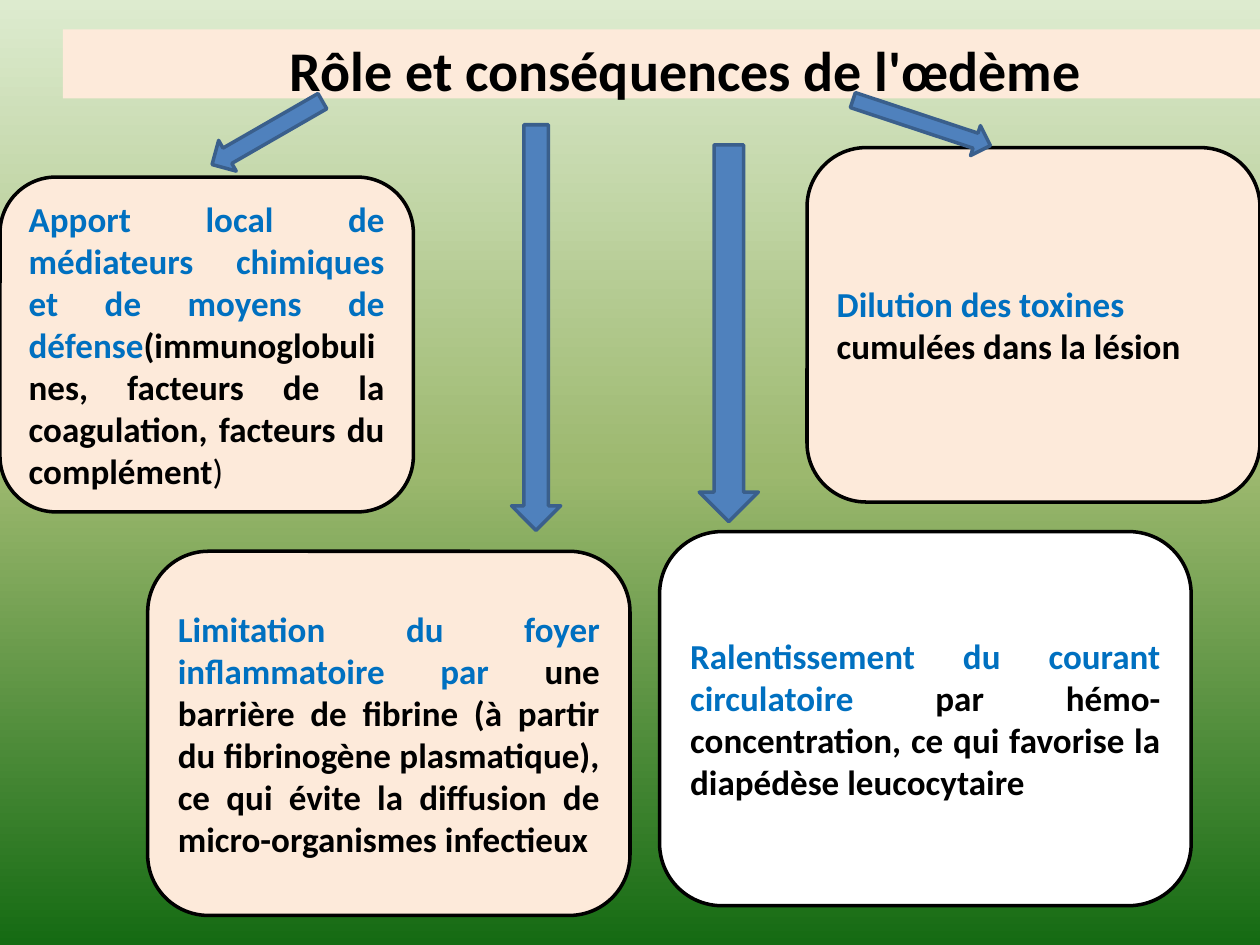
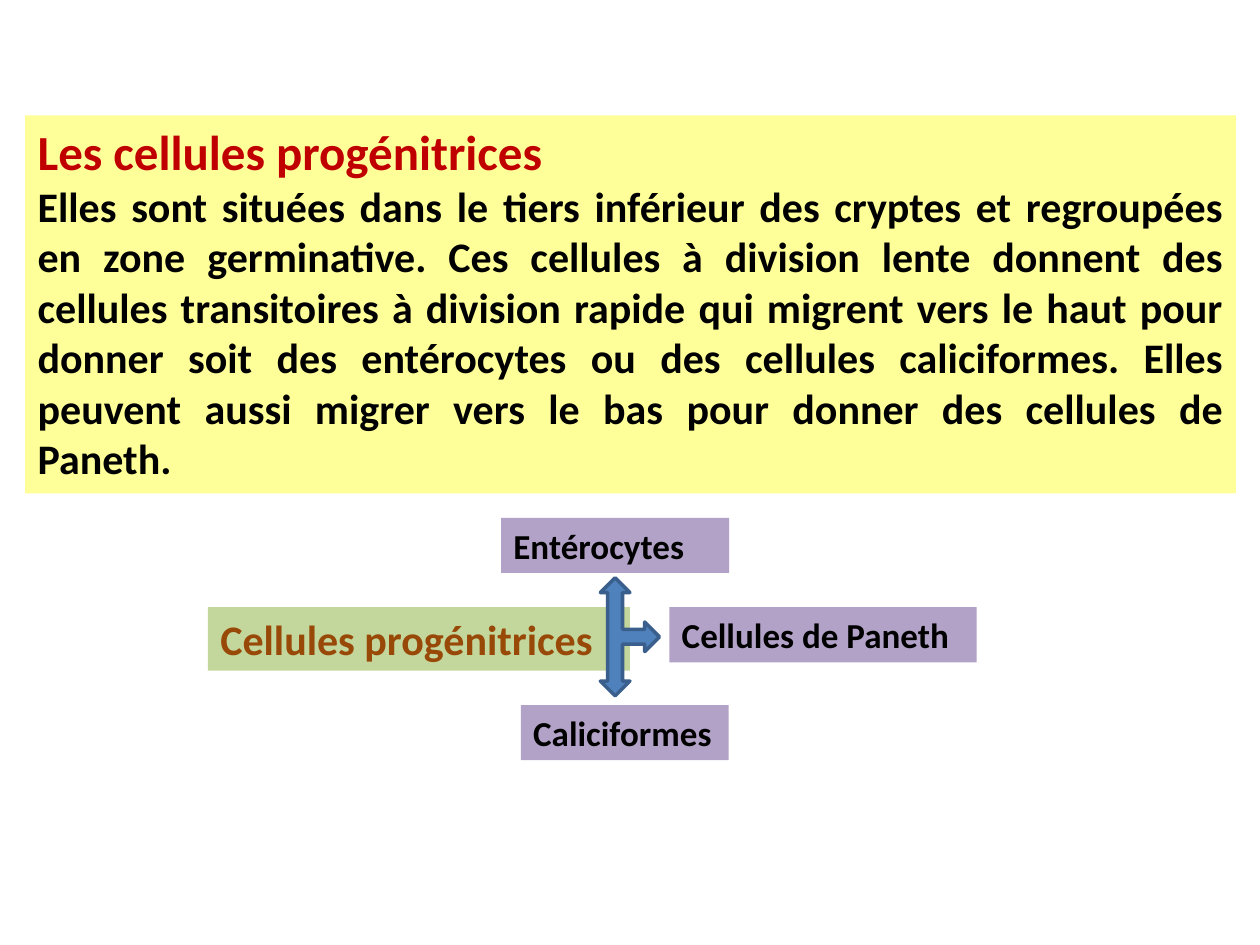
from copy import deepcopy

from pptx import Presentation
from pptx.dml.color import RGBColor
from pptx.enum import shapes, text
from pptx.oxml.ns import qn
from pptx.util import Pt

FONT = "Calibri"
BLACK = RGBColor(0x00, 0x00, 0x00)
WHITE = RGBColor(0xFF, 0xFF, 0xFF)
BLUE = RGBColor(0x00, 0x70, 0xC0)
RED = RGBColor(0xC0, 0x00, 0x00)
BROWN = RGBColor(0x98, 0x48, 0x07)
PEACH = RGBColor(0xFD, 0xEA, 0xDA)
YELLOW = RGBColor(0xFF, 0xFF, 0x99)
GREEN = RGBColor(0xC3, 0xD6, 0x9B)
PURPLE = RGBColor(0xB3, 0xA2, 0xC7)
ARROW_FILL = RGBColor(0x4F, 0x81, 0xBD)
ARROW_LINE = RGBColor(0x3A, 0x5F, 0x8C)
GRADIENT = [(0, RGBColor(0xDD, 0xEB, 0xCF)), (0.5, RGBColor(0x9C, 0xB8, 0x6E)),
            (1, RGBColor(0x15, 0x6B, 0x13))]

KIND = shapes.MSO_SHAPE
ALIGN = text.PP_ALIGN
ANCHOR = text.MSO_ANCHOR


def add_shape(parent, kind, at, fill, line=None, rotation=0):
    sp = parent.add_shape(kind, *[Pt(v) for v in at])
    sp.shadow.inherit = False
    sp.rotation = rotation
    sp.fill.solid()
    sp.fill.fore_color.rgb = fill
    if line is None:
        sp.line.fill.background()
    else:
        sp.line.color.rgb = line
        sp.line.width = Pt(2)
    return sp


def write(sp, paragraphs, align, anchor=ANCHOR.TOP):
    """Each paragraph is a list of (text, size, colour) runs."""
    tf = sp.text_frame
    tf.word_wrap = True
    tf.vertical_anchor = anchor
    for i, runs in enumerate(paragraphs):
        p = tf.paragraphs[0] if i == 0 else tf.add_paragraph()
        p.alignment = align
        for words, size, color in runs:
            r = p.add_run()
            r.text = words
            r.font.name = FONT
            r.font.size = Pt(size)
            r.font.bold = True
            r.font.color.rgb = color


prs = Presentation()
prs.slide_width, prs.slide_height = Pt(720), Pt(540)
blank = prs.slide_layouts[6]

# Slide 1: gradient background
s = prs.slides.add_slide(blank)
bg = s.background.fill
bg.gradient()
bg.gradient_angle = 270
stops = s._element.find(".//" + qn("a:gsLst"))
stops.append(deepcopy(stops[-1]))
for stop, (position, color) in zip(bg.gradient_stops, GRADIENT):
    stop.position = position
    stop.color.rgb = color

# Title band
sp = add_shape(s.shapes, KIND.RECTANGLE, (36, 16.8, 684, 39.4), PEACH)
write(sp, [[("Rôle et conséquences de l'œdème", 32, BLACK)]], ALIGN.CENTER)
sp.text_frame.margin_left = Pt(35)

# Roles of the oedema
roles = [
    ((0, 101.2, 236.2, 191.3), PEACH,
     [[("Apport local de médiateurs chimiques et de moyens de défense", 20, BLUE),
       ("(immunoglobulines, facteurs de la coagulation, facteurs du complément", 20, BLACK),
       (")", 20, BLACK)]]),
    ((84.4, 315, 275.6, 208.1), PEACH,
     [[("Limitation du foyer inflammatoire par ", 20, BLUE),
       ("une barrière de fibrine (à partir du fibrinogène plasmatique), "
        "ce qui évite la diffusion de micro-organismes infectieux", 20, BLACK)]]),
    ((461.2, 84.4, 258.8, 202.5), PEACH,
     [[("Dilution des toxines", 20, BLUE)],
      [("cumulées dans la lésion", 20, BLACK)]]),
    ((376.9, 303.8, 303.8, 213.8), WHITE,
     [[("Ralentissement du courant circulatoire ", 20, BLUE),
       ("par hémo- concentration, ce qui favorise la diapédèse leucocytaire", 20, BLACK)]]),
]
for i, (at, fill, paragraphs) in enumerate(roles):
    sp = add_shape(s.shapes, KIND.ROUNDED_RECTANGLE, at, fill, BLACK)
    write(sp, paragraphs, ALIGN.JUSTIFY, ANCHOR.MIDDLE)
    if i == 0:
        sp.text_frame.paragraphs[0].runs[-1].font.bold = False

# Arrows from the title to the roles
for at, rotation in [((142.6, 39.6, 20.2, 72.7), 60.1),
                     ((292.3, 71.3, 28.1, 231.8), 0),
                     ((517.7, 28.8, 18, 82.8), 288.3),
                     ((399.6, 82.8, 33.8, 215.3), 0)]:
    add_shape(s.shapes, KIND.DOWN_ARROW, at, ARROW_FILL, ARROW_LINE, rotation)

# Slide 2: definition
s = prs.slides.add_slide(blank)
s.background.fill.solid()
s.background.fill.fore_color.rgb = WHITE
sp = add_shape(s.shapes, KIND.RECTANGLE, (14.4, 66, 691.9, 216), YELLOW)
write(sp, [
    [("Les cellules progénitrices", 28, RED)],
    [("Elles sont situées dans le tiers inférieur des cryptes et regroupées en zone "
      "germinative. Ces cellules à division lente donnent des cellules transitoires à "
      "division rapide qui migrent vers le haut pour donner soit des entérocytes ou des "
      "cellules caliciformes. Elles peuvent aussi migrer vers le bas pour donner des "
      "cellules de Paneth.", 24, BLACK)],
], ALIGN.JUSTIFY)

# Diagram: progenitor cells, three-way arrow, descendants
diagram = s.shapes.add_group_shape().shapes
sp = add_shape(diagram, KIND.RECTANGLE, (118.8, 347, 241.2, 36.3), GREEN)
write(sp, [[("Cellules progénitrices", 24, BROWN)]], ALIGN.LEFT)
add_shape(diagram, KIND.LEFT_RIGHT_UP_ARROW, (326.2, 347, 67.5, 33.8),
          ARROW_FILL, ARROW_LINE, 90)
for name, left, top, width in [("Entérocytes", 286.3, 295.9, 130.3),
                               ("Caliciformes", 297.6, 402.9, 118.8),
                               ("Cellules de Paneth", 382.5, 347, 175.7)]:
    sp = add_shape(diagram, KIND.RECTANGLE, (left, top, width, 31.5), PURPLE)
    write(sp, [[(name, 20, BLACK)]], ALIGN.LEFT)

prs.save("out.pptx")
